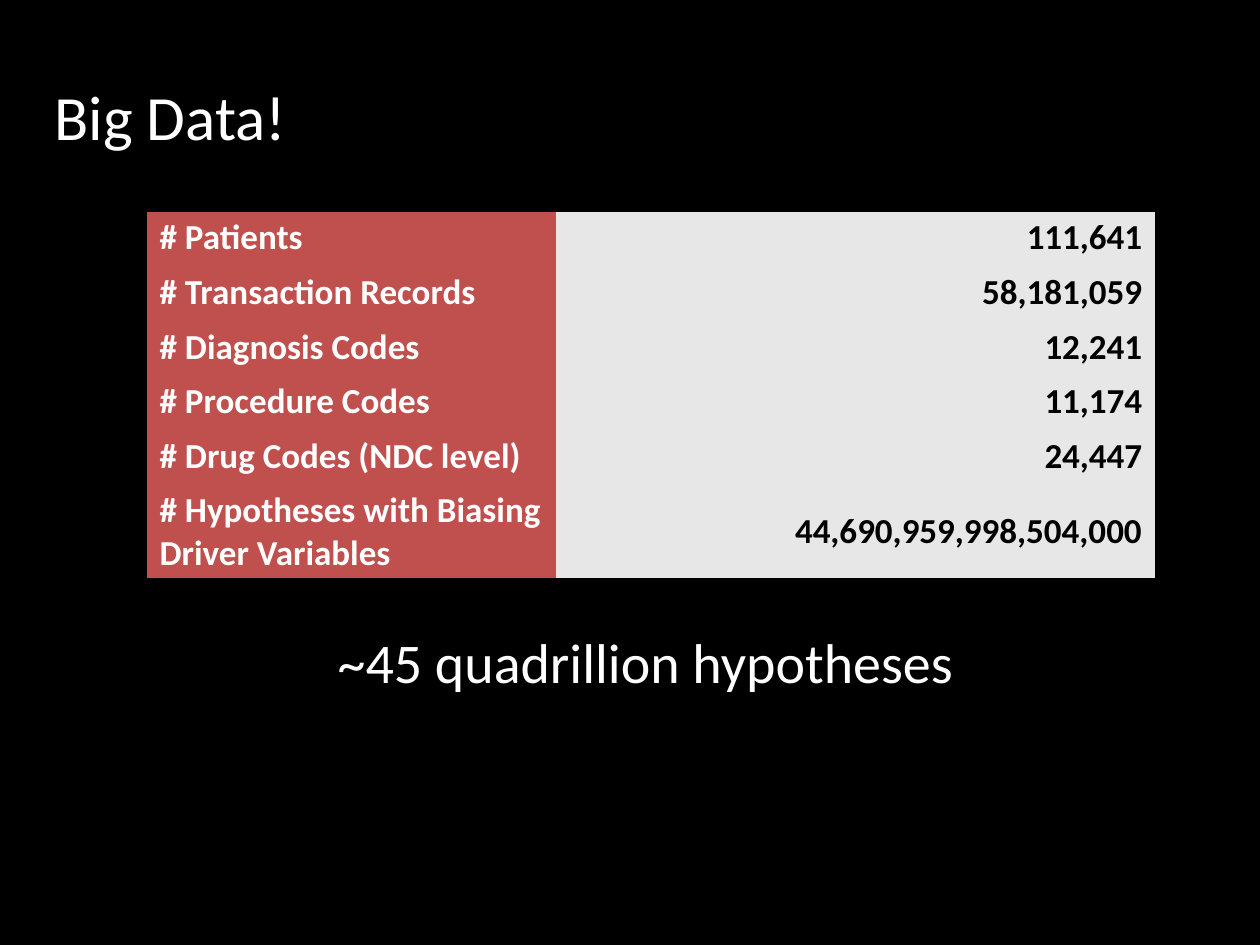
from dataclasses import dataclass

from lxml.etree import SubElement
from pptx import Presentation
from pptx.dml.color import RGBColor
from pptx.enum.text import MSO_ANCHOR, MSO_AUTO_SIZE, PP_ALIGN
from pptx.oxml import parse_xml
from pptx.oxml.ns import nsdecls, qn
from pptx.util import Pt

TITLE = "Big Data!"
COUNTS = [
    ("# Patients", "111,641"),
    ("# Transaction Records", "58,181,059"),
    ("# Diagnosis Codes", "12,241"),
    ("# Procedure Codes", "11,174"),
    ("# Drug Codes (NDC level)", "24,447"),
    ("# Hypotheses with Biasing Driver Variables", "44,690,959,998,504,000"),
]
SUMMARY = "~45 quadrillion hypotheses"


@dataclass(frozen=True)
class Theme:
    font: str = "Calibri"
    black: str = "000000"
    white: str = "FFFFFF"
    label_fill: str = "C0504D"
    value_fill: str = "E7E7E7"
    title_size: int = 36
    summary_size: int = 32
    table_size: int = 20
    border_width: int = 2


THEME = Theme()
PLAIN_TABLE_STYLE = "{2D5ABB26-0587-4C30-8999-92F81FD0307C}"
COLUMN_WIDTHS = (234, 342)
ROW_HEIGHT = 29.2


def write_text(frame, text, *, size, color, bold=False,
               align=PP_ALIGN.LEFT, anchor=MSO_ANCHOR.TOP):
    frame.word_wrap = True
    frame.vertical_anchor = anchor
    para = frame.paragraphs[0]
    para.alignment = align
    span = para.add_run()
    span.text = text
    span.font.name = THEME.font
    span.font.size = Pt(size)
    span.font.bold = bold
    span.font.color.rgb = RGBColor.from_string(color)


def add_text(page, text, left, top, width, height, **style):
    box = page.shapes.add_textbox(Pt(left), Pt(top), Pt(width), Pt(height))
    write_text(box.text_frame, text, **style)
    return box


def add_border(cell, side):
    line = parse_xml(f'<a:{side} {nsdecls("a")} w="{Pt(THEME.border_width)}"/>')
    fill = SubElement(line, qn("a:solidFill"))
    SubElement(fill, qn("a:srgbClr"), val=THEME.black)
    cell._tc.get_or_add_tcPr().insert(0, line)


def add_counts(page, left, top):
    table = page.shapes.add_table(
        len(COUNTS), len(COLUMN_WIDTHS), Pt(left), Pt(top),
        Pt(sum(COLUMN_WIDTHS)), Pt(ROW_HEIGHT * len(COUNTS))).table
    table.first_row = table.horz_banding = False
    table._tbl.tblPr.find(qn("a:tableStyleId")).text = PLAIN_TABLE_STYLE
    for column, width in zip(table.columns, COLUMN_WIDTHS):
        column.width = Pt(width)
    columns = (
        (THEME.label_fill, THEME.white, PP_ALIGN.LEFT, MSO_ANCHOR.TOP),
        (THEME.value_fill, THEME.black, PP_ALIGN.RIGHT, MSO_ANCHOR.MIDDLE),
    )
    for row, texts in enumerate(COUNTS):
        table.rows[row].height = Pt(ROW_HEIGHT)
        for column, (fill, color, align, anchor) in enumerate(columns):
            cell = table.cell(row, column)
            cell.fill.solid()
            cell.fill.fore_color.rgb = RGBColor.from_string(fill)
            write_text(cell.text_frame, texts[column], size=THEME.table_size,
                       color=color, bold=True, align=align)
            cell.vertical_anchor = anchor
            if row == 0:
                add_border(cell, "lnT")
            if row == len(COUNTS) - 1:
                add_border(cell, "lnB")


def main():
    deck = Presentation()
    deck.slide_width, deck.slide_height = Pt(720), Pt(540)
    page = deck.slides.add_slide(deck.slide_layouts[6])
    page.background.fill.solid()
    page.background.fill.fore_color.rgb = RGBColor.from_string(THEME.black)
    add_text(page, TITLE, 24, 38, 648, 56, size=THEME.title_size,
             color=THEME.white, anchor=MSO_ANCHOR.MIDDLE)
    add_counts(page, 84, 120)
    summary = add_text(page, SUMMARY, 84, 355, 570, 46, size=THEME.summary_size,
                       color=THEME.white, align=PP_ALIGN.CENTER)
    summary.text_frame.auto_size = MSO_AUTO_SIZE.SHAPE_TO_FIT_TEXT
    deck.save("out.pptx")


if __name__ == "__main__":
    main()
